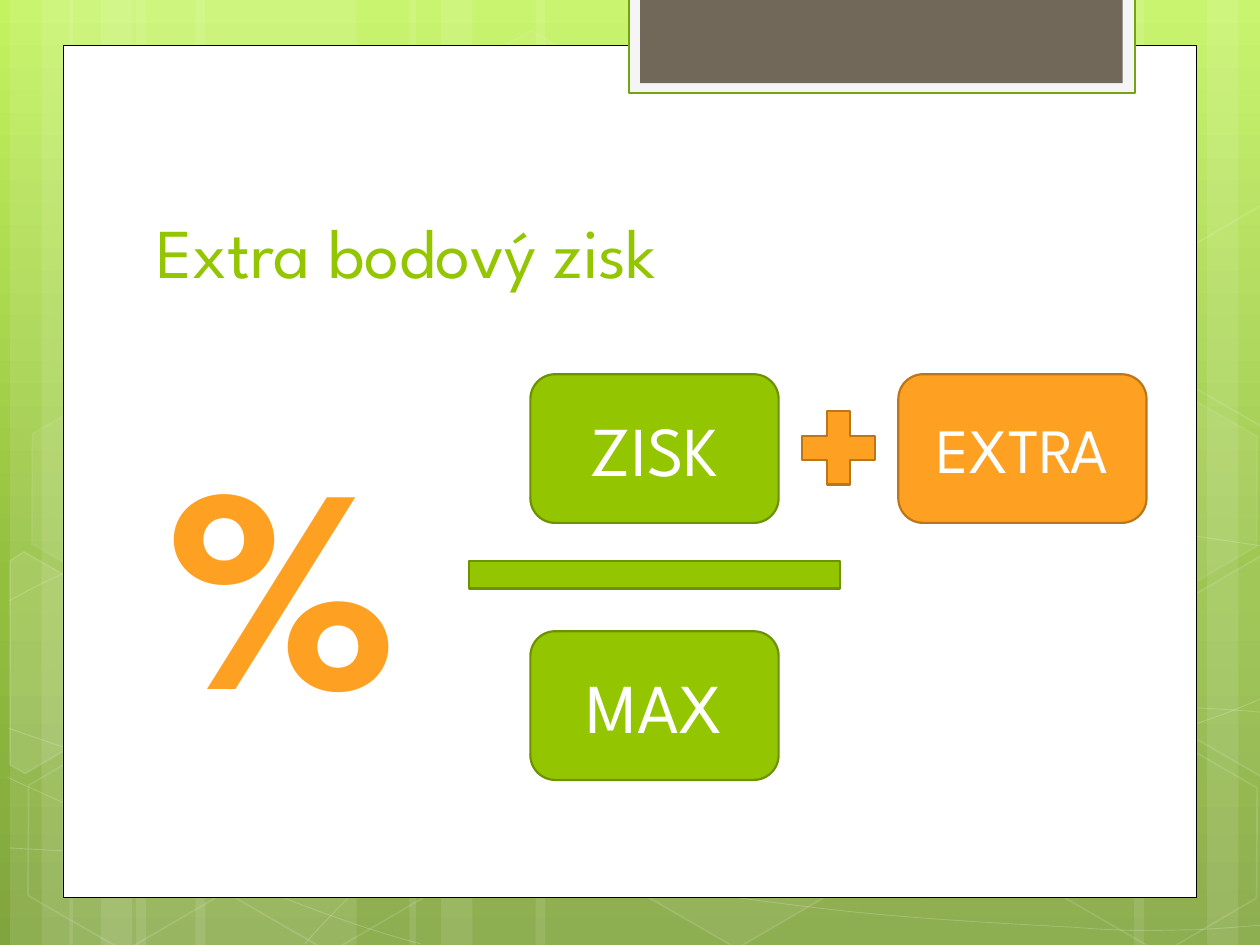
from copy import deepcopy

from lxml import etree
from pptx import Presentation
from pptx.dml.color import RGBColor
from pptx.enum.shapes import MSO_SHAPE
from pptx.enum.text import MSO_ANCHOR, PP_ALIGN
from pptx.oxml.ns import qn
from pptx.util import Inches, Pt

GREEN, ORANGE, WHITE = "94C600", "FEA022", "FFFFFF"
DARK_GREEN, DARK_ORANGE = "6D9200", "BC7619"


def paint(sp, fill=None, line=None, width=1.25, fill_alpha=100, line_alpha=100):
    """Set fill and outline as hex colours, with opacity in percent."""
    sp.shadow.inherit = False
    sp.line.width = Pt(width)
    for fmt, color, alpha in ((sp.fill, fill, fill_alpha), (sp.line.fill, line, line_alpha)):
        if color is None:
            fmt.background()
            continue
        fmt.solid()
        fmt.fore_color.rgb = RGBColor.from_string(color)
        if alpha < 100:
            parent = sp.element.spPr if fmt is sp.fill else sp.element.spPr.find(qn("a:ln"))
            clr = parent.find(qn("a:solidFill")).find(qn("a:srgbClr"))
            etree.SubElement(clr, qn("a:alpha")).set("val", str(alpha * 1000))


def write(sp, text, size, color, anchor, align=PP_ALIGN.LEFT, bold=False):
    tf = sp.text_frame
    for name, value in {"word_wrap": True, "vertical_anchor": anchor}.items():
        setattr(tf, name, value)
    p = tf.paragraphs[0]
    p.alignment = align
    r = p.add_run()
    r.text = text
    for name, value in {"name": "League Spartan", "size": Pt(size), "bold": bold}.items():
        setattr(r.font, name, value)
    r.font.color.rgb = RGBColor.from_string(color)


prs = Presentation()
prs.slide_width, prs.slide_height = Inches(10), Inches(7.5)
s = prs.slides.add_slide(prs.slide_layouts[6])

# Background gradient, top to bottom
bg = s.background.fill
bg.gradient()
bg.gradient_angle = 270
gs_list = s.element.find(".//" + qn("a:gsLst"))
gs_list.append(deepcopy(gs_list[-1]))
stops = ((0, "C3F35F"), (0.62, "93BF3F"), (1, "81A53E"))
for stop, (position, color) in zip(bg.gradient_stops, stops):
    stop.position = position
    stop.color.rgb = RGBColor.from_string(color)

# Translucent vertical bands: left, width
bands = [(1.08, 1.75), (0.08, 0.5), (0.33, 0.83), (1.55, 1.75), (0.55, 0.5), (0.8, 0.83),
         (7.33, 1.75), (9.58, 0.5), (9, 0.83), (4.25, 3.08), (3.25, 0.5), (3.5, 0.83)]
for x, w in bands:
    sp = s.shapes.add_shape(MSO_SHAPE.RECTANGLE, Inches(x), 0, Inches(w), prs.slide_height)
    paint(sp, WHITE, fill_alpha=10)

# Thin waves: a start point, then three Bezier points per segment
waves = [
    [(0.07, 6.73), (0.61, 6.76), (1.15, 6.79), (1.9, 6.78), (2.65, 6.77), (3.58, 6.75),
     (4.58, 6.65), (5.58, 6.55), (7, 6.36), (7.92, 6.17), (8.83, 5.98), (9.77, 5.68),
     (10.07, 5.51)],
    [(0.07, 4.77), (0.36, 4.61), (0.65, 4.46), (1.21, 4.31), (1.78, 4.16), (2.59, 3.94),
     (3.47, 3.87), (4.36, 3.8), (5.44, 3.79), (6.54, 3.87), (7.64, 3.95), (9.47, 4.26),
     (10.07, 4.34)],
    [(0.06, 6.17), (1.27, 6.72), (2.47, 7.27), (3.34, 7.49)],
    [(0.07, 5.78), (0.38, 5.89), (0.7, 6), (1.28, 6.16), (1.86, 6.31), (2.73, 6.56),
     (3.57, 6.73), (4.4, 6.9), (5.45, 7.08), (6.28, 7.18), (7.11, 7.29), (8, 7.33),
     (8.53, 7.36), (9.05, 7.4), (9.19, 7.38), (9.45, 7.38), (9.71, 7.37), (9.89, 7.35),
     (10.07, 7.34)],
    [(2.42, 7.49), (2.6, 7.29), (2.78, 7.09), (3.02, 6.91), (3.26, 6.73), (3.6, 6.53),
     (3.88, 6.39), (4.16, 6.25), (4.33, 6.19), (4.7, 6.09), (5.06, 5.99), (5.73, 5.85),
     (6.08, 5.78), (6.44, 5.71), (6.49, 5.71), (6.8, 5.69), (7.11, 5.66), (7.6, 5.63),
     (7.94, 5.62), (8.29, 5.61), (8.86, 5.62), (8.86, 5.62), (9.08, 5.62), (9.31, 5.62),
     (9.53, 5.62), (9.71, 5.63), (9.88, 5.64), (9.97, 5.65), (10.06, 5.66), (10.03, 5.65),
     (10.06, 5.66)],
]
for wave in waves:
    points = [(Inches(x), Inches(y)) for x, y in wave]
    builder = s.shapes.build_freeform(*points[0])
    builder.add_line_segments(points[1:], close=False)
    sp = builder.convert_to_shape()
    paint(sp, None, WHITE, 0.5, line_alpha=20)
    # Join each three line points into one curve
    lines = list(sp.element.iter(qn("a:lnTo")))
    outline = lines[0].getparent()
    for i in range(0, len(lines), 3):
        curve = etree.SubElement(outline, qn("a:cubicBezTo"))
        for ln in lines[i:i + 3]:
            curve.append(ln[0])
            outline.remove(ln)

# Tilted hexagons: left, top, fill opacity, line opacity
hexagons = [(3.34, 0.36, 4, 8), (4.97, 5.89, 6, 12), (0.11, 5.91, 0, 12), (0.14, 3.12, 7, 8),
            (1.74, 5.92, 0, 12), (8.34, 5.93, 0, 12), (8.34, 3.14, 7, 8)]
for x, y, fill_alpha, line_alpha in hexagons:
    sp = s.shapes.add_shape(MSO_SHAPE.HEXAGON, Inches(x), Inches(y), Inches(1.75), Inches(1.52))
    sp.adjustments[0] = 0.285
    sp.rotation = 30
    paint(sp, WHITE if fill_alpha else None, WHITE, 1, fill_alpha, line_alpha)

# Hexagons cut off by the slide edges: fill opacity, corners
cut_hexagons = [
    (10, [(0.08, 4.45), (0.19, 4.38), (0.96, 4.82), (0.95, 5.7), (0.2, 6.14), (0.08, 6.07)]),
    (4, [(9.26, 4.85), (10.01, 4.41), (10.09, 4.46), (10.09, 6.13), (10.02, 6.17), (9.26, 5.73)]),
    (0, [(9.26, 2.07), (10.01, 1.63), (10.1, 1.68), (10.09, 3.35), (10.02, 3.39), (9.26, 2.95)]),
]
for fill_alpha, corners in cut_hexagons:
    points = [(Inches(x), Inches(y)) for x, y in corners]
    builder = s.shapes.build_freeform(*points[0])
    builder.add_line_segments(points[1:], close=True)
    paint(builder.convert_to_shape(), WHITE if fill_alpha else None, WHITE, 1, fill_alpha, 12)

# White page and the tab at the top
panels = [(0.5, 0.36, 9, 6.76, WHITE, "000000", 0.5),
          (4.99, -0.02, 4.02, 0.76, "F5F5F5", "74A510", 1.25),
          (5.08, -0.02, 3.83, 0.68, "71685A", None, 1.25)]
for x, y, w, h, fill, line, width in panels:
    sp = s.shapes.add_shape(MSO_SHAPE.RECTANGLE, Inches(x), Inches(y), Inches(w), Inches(h))
    paint(sp, fill, line, width)

# Title and percent sign
sp = s.shapes.add_textbox(Inches(1.14), Inches(1.12), Inches(7.68), Inches(1.25))
write(sp, "Extra bodový zisk", 40, GREEN, MSO_ANCHOR.BOTTOM)
sp = s.shapes.add_textbox(Inches(1.22), Inches(3.12), Inches(1.89), Inches(2.89))
write(sp, "%", 166, ORANGE, MSO_ANCHOR.TOP, bold=True)

# Fraction bar
sp = s.shapes.add_shape(MSO_SHAPE.MATH_MINUS, Inches(3.19), Inches(4.09), Inches(4.01), Inches(0.94))
paint(sp, GREEN, DARK_GREEN)

# Terms of the fraction
terms = [("ZISK", 4.21, 2.97, 40, GREEN, DARK_GREEN),
         ("MAX", 4.21, 5.01, 40, GREEN, DARK_GREEN),
         ("EXTRA", 7.13, 2.97, 36, ORANGE, DARK_ORANGE)]
for text, x, y, size, fill, line in terms:
    sp = s.shapes.add_shape(MSO_SHAPE.ROUNDED_RECTANGLE, Inches(x), Inches(y),
                            Inches(1.97), Inches(1.18))
    paint(sp, fill, line)
    write(sp, text, size, WHITE, MSO_ANCHOR.MIDDLE, PP_ALIGN.CENTER)

# Plus sign
sp = s.shapes.add_shape(MSO_SHAPE.MATH_PLUS, Inches(6.26), Inches(3.16), Inches(0.79), Inches(0.79))
paint(sp, ORANGE, DARK_ORANGE)

prs.save("out.pptx")
